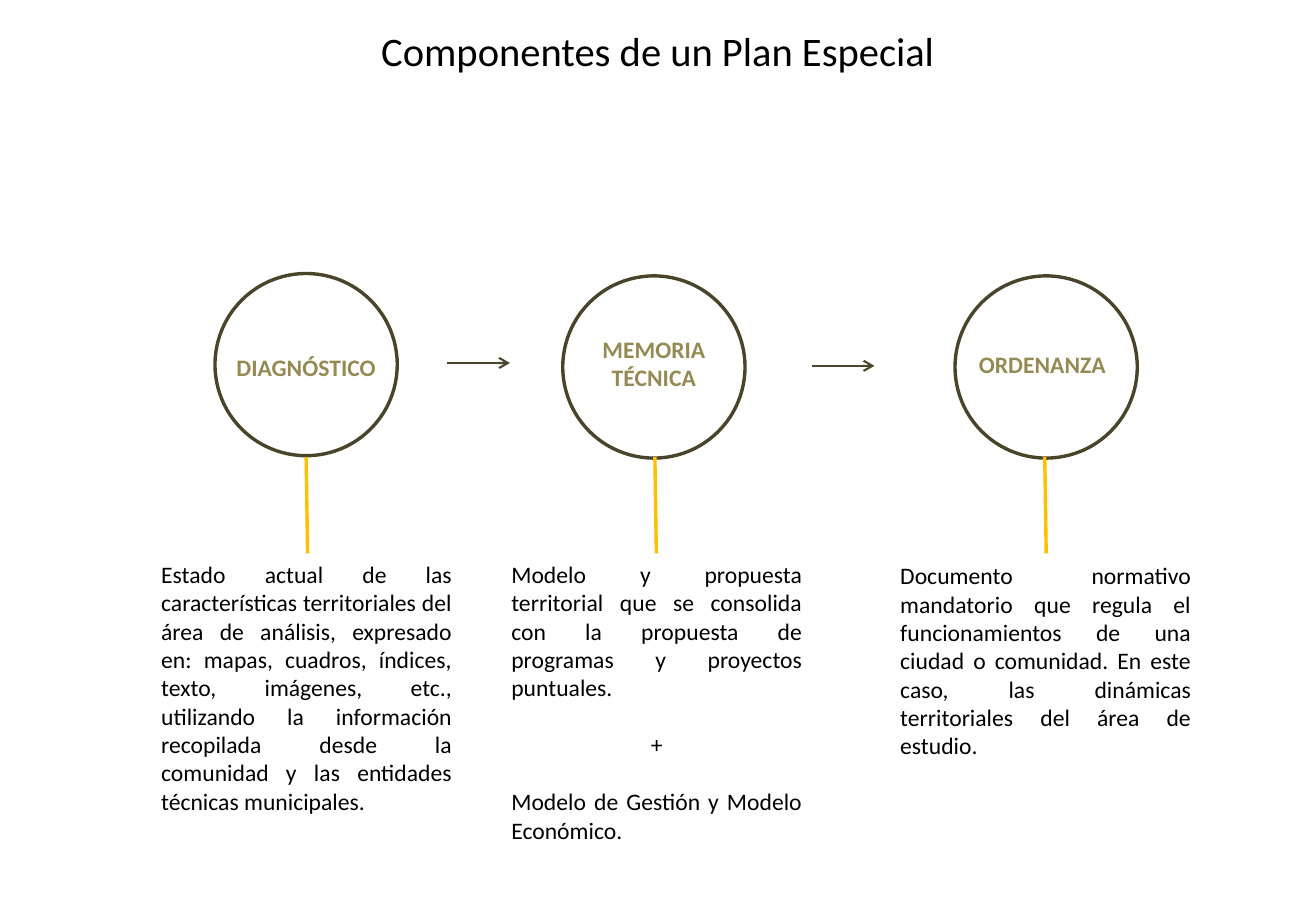
import pptx
import pptx.util
import pptx.oxml
import pptx.oxml.ns
import pptx.dml.color
import pptx.enum.shapes
import pptx.enum.text

Cm, Pt = pptx.util.Cm, pptx.util.Pt
ALIGN = pptx.enum.text.PP_ALIGN

COLORS = {"text": "000000", "label": "948A54", "outline": "4A452A", "stem": "FFC000"}
FONT = "Calibri"

TITLE = "Componentes de un Plan Especial"
# center and top place the circle; other lengths are in cm too
COMPONENTS = [
    {"label": ["DIAGNÓSTICO"], "center": 6.4, "top": 5.72,
     "label_center": 6.4, "label_top": 7.26, "stem_x": 6.4, "text_left": 3.12, "text_top": 11.58,
     "text": [("Estado actual de las características territoriales del área de análisis, "
               "expresado en: mapas, cuadros, índices, texto, imágenes, etc., utilizando la "
               "información recopilada desde la comunidad y las entidades técnicas municipales.",
               ALIGN.JUSTIFY)]},
    {"label": ["MEMORIA", "TÉCNICA"], "center": 13.67, "top": 5.77,
     "label_center": 13.67, "label_top": 6.88, "stem_x": 13.69, "text_left": 10.44, "text_top": 11.58,
     "text": [("Modelo y propuesta territorial que se consolida con la propuesta de "
               "programas y proyectos puntuales.", ALIGN.JUSTIFY),
              ("+", ALIGN.CENTER),
              ("Modelo de Gestión y Modelo Económico.", ALIGN.JUSTIFY)]},
    {"label": ["ORDENANZA"], "center": 21.87, "top": 5.77,
     "label_center": 21.79, "label_top": 7.19, "stem_x": 21.84, "text_left": 18.57, "text_top": 11.61,
     "text": [("Documento normativo mandatorio que regula el funcionamientos de una ciudad o "
               "comunidad. En este caso, las dinámicas territoriales del área de estudio.",
               ALIGN.JUSTIFY)]},
]
ARROWS = [(9.35, 7.59), (16.97, 7.65)]

DIAMETER = 3.81
ARROW_LENGTH = 1.31
STEM_TOP, STEM_LENGTH, STEM_SLANT = 9.56, 2.01, 0.03
LABEL_WIDTH = 5.2
TEXT_WIDTH, TEXT_HEIGHT = 6.58, 5.64
LINE_HEIGHT = 0.6


def color(name):
    return pptx.dml.color.RGBColor.from_string(COLORS[name])


def add_text(page, left, top, width, height, paragraphs, size, color_name, bold=False, gap=0):
    """Write (text, alignment) pairs; gap is the space in points between paragraphs."""
    box = page.shapes.add_textbox(Cm(left), Cm(top), Cm(width), Cm(height))
    frame = box.text_frame
    frame.word_wrap = True
    for index, (text, alignment) in enumerate(paragraphs):
        para = frame.add_paragraph() if index else frame.paragraphs[0]
        para.alignment = alignment
        if index:
            para.space_before = Pt(gap)
        span = para.add_run()
        span.text = text
        span.font.name = FONT
        span.font.size = Pt(size)
        span.font.bold = bold
        span.font.color.rgb = color(color_name)


def add_line(page, start, end, color_name, width, arrow=False):
    line = page.shapes.add_connector(
        pptx.enum.shapes.MSO_CONNECTOR.STRAIGHT,
        Cm(start[0]), Cm(start[1]), Cm(end[0]), Cm(end[1]))
    line.line.color.rgb = color(color_name)
    line.line.width = Pt(width)
    if arrow:
        head = pptx.oxml.parse_xml(
            "<a:tailEnd %s type='arrow'/>" % pptx.oxml.ns.nsdecls("a"))
        line.line._get_or_add_ln().append(head)
    line._element.spPr.append(
        pptx.oxml.parse_xml("<a:effectLst %s/>" % pptx.oxml.ns.nsdecls("a")))


def add_circle(page, center, top):
    circle = page.shapes.add_shape(
        pptx.enum.shapes.MSO_SHAPE.OVAL,
        Cm(center - DIAMETER / 2), Cm(top), Cm(DIAMETER), Cm(DIAMETER))
    circle.shadow.inherit = False
    circle.fill.background()
    circle.line.color.rgb = color("outline")
    circle.line.width = Pt(2)


def add_component(page, item):
    add_circle(page, item["center"], item["top"])
    add_text(page, item["label_center"] - LABEL_WIDTH / 2, item["label_top"], LABEL_WIDTH,
             0.26 + LINE_HEIGHT * len(item["label"]),
             [(line, ALIGN.CENTER) for line in item["label"]], 14, "label", bold=True)
    add_line(page, (item["stem_x"] + STEM_SLANT, STEM_TOP + STEM_LENGTH),
             (item["stem_x"], STEM_TOP), "stem", 2)
    add_text(page, item["text_left"], item["text_top"], TEXT_WIDTH, TEXT_HEIGHT,
             item["text"], 14, "text", gap=17)


def main():
    deck = pptx.Presentation()
    deck.slide_width, deck.slide_height = Cm(27.51), Cm(19.05)
    page = deck.slides.add_slide(deck.slide_layouts[6])
    add_text(page, 1.75, 0.43, 24, 1.32, [(TITLE, ALIGN.CENTER)], 24, "text")
    for item in COMPONENTS:
        add_component(page, item)
    for left, height in ARROWS:
        add_line(page, (left, height), (left + ARROW_LENGTH, height), "outline", 1.25, arrow=True)
    deck.save("out.pptx")


if __name__ == "__main__":
    main()
